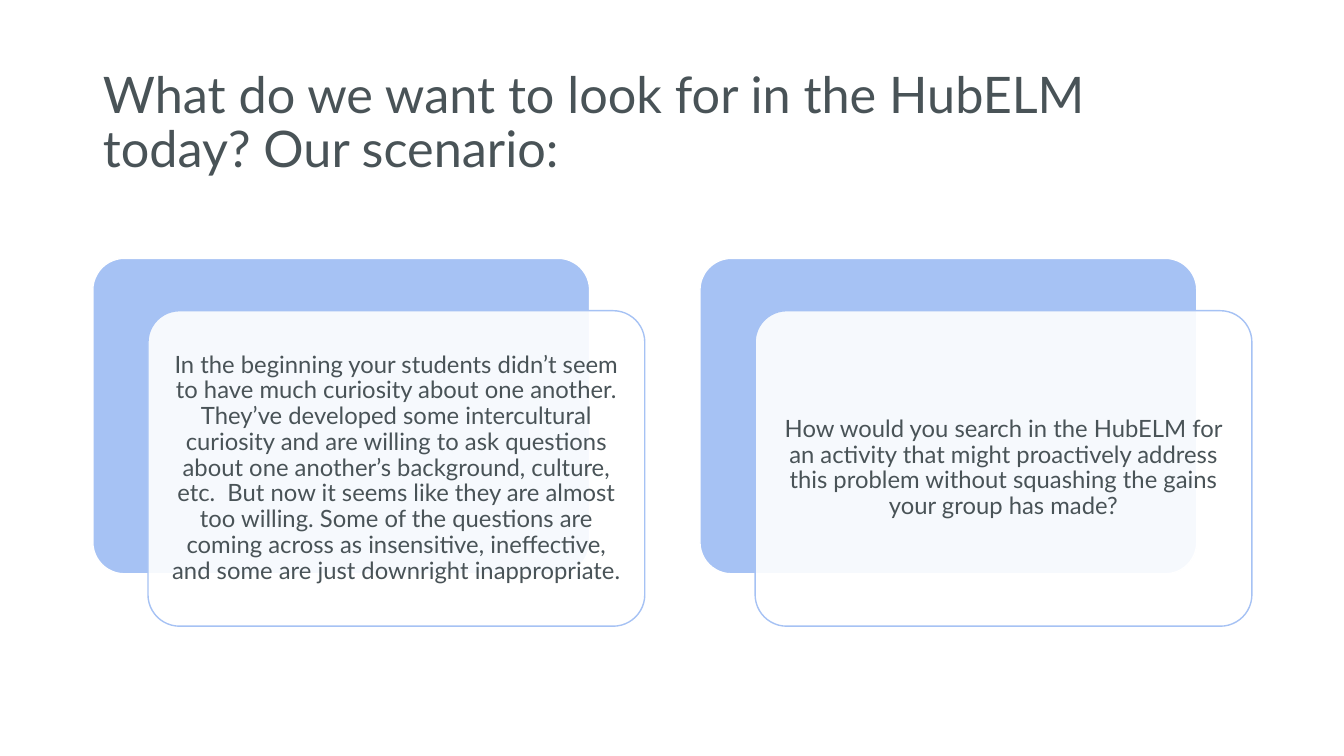
from lxml.etree import SubElement
from pptx import Presentation
from pptx.dml.color import RGBColor
from pptx.enum.shapes import MSO_SHAPE
from pptx.enum.text import MSO_ANCHOR, PP_ALIGN
from pptx.oxml.ns import qn
from pptx.util import Cm, Pt

SLATE = RGBColor(0x49, 0x53, 0x57)
BLUE = RGBColor(0xA6, 0xC2, 0xF4)
WHITE = RGBColor(0xFF, 0xFF, 0xFF)

TITLE = "What do we want to look for in the HubELM today? Our scenario:"
SCENARIO_TEXTS = [
    "In the beginning your students didn’t seem to have much curiosity about "
    "one another. They’ve developed some intercultural curiosity and are "
    "willing to ask questions about one another’s background, culture, etc.  "
    "But now it seems like they are almost too willing. Some of the questions "
    "are coming across as insensitive, ineffective, and some are just "
    "downright inappropriate.",
    "How would you search in the HubELM for an activity that might proactively "
    "address this problem without squashing the gains your group has made?",
]

# Card geometry in centimetres
CARD_LEFT, CARD_TOP = 2.34, 6.51
CARD_WIDTH, CARD_HEIGHT = 12.52, 7.95
CARD_PITCH = 15.3
FRONT_SHIFT_X, FRONT_SHIFT_Y = 1.39, 1.32


class SlideBuilder:
    """Holds the text style and the slide being built."""

    font = {"name": "Lato", "bold": False}

    def __init__(self, presentation):
        self.slide = presentation.slides.add_slide(presentation.slide_layouts[5])

    def set_text(self, shape, text, size, alignment, margins):
        frame = shape.text_frame
        frame_format = {"word_wrap": True, "vertical_anchor": MSO_ANCHOR.MIDDLE, **margins}
        for name, value in frame_format.items():
            setattr(frame, name, value)
        paragraph = frame.paragraphs[0]
        paragraph.alignment = alignment
        paragraph.line_spacing = 0.9
        run = paragraph.add_run()
        run.text = text
        for name, value in {**self.font, "size": Pt(size)}.items():
            setattr(run.font, name, value)
        run.font.color.rgb = SLATE

    def title(self, text):
        shape = self.slide.shapes.title
        position = {"left": Cm(2.34), "top": Cm(1.55), "width": Cm(29.21), "height": Cm(3.15)}
        for name, value in position.items():
            setattr(shape, name, value)
        self.set_text(shape, text, 36, PP_ALIGN.LEFT, {})

    def rounded_box(self, left, top, fill, line, opacity=100):
        shape = self.slide.shapes.add_shape(
            MSO_SHAPE.ROUNDED_RECTANGLE, Cm(left), Cm(top), Cm(CARD_WIDTH), Cm(CARD_HEIGHT)
        )
        shape.adjustments[0] = 0.1
        shape.shadow.inherit = False
        shape.fill.solid()
        shape.fill.fore_color.rgb = fill
        shape.line.color.rgb = line
        shape.line.width = Pt(1)
        if opacity < 100:
            color = shape.element.spPr.find(qn("a:solidFill"))[0]
            SubElement(color, qn("a:alpha"), val=str(opacity * 1000))
        return shape

    def card(self, left, top, text):
        self.rounded_box(left, top, BLUE, WHITE)
        front = self.rounded_box(left + FRONT_SHIFT_X, top + FRONT_SHIFT_Y, WHITE, BLUE, 90)
        sides = ("left", "top", "right", "bottom")
        margins = {f"margin_{side}": Cm(0.18) for side in sides}
        self.set_text(front, text, 17, PP_ALIGN.CENTER, margins)


def main():
    presentation = Presentation()
    presentation.slide_width = Cm(33.87)
    presentation.slide_height = Cm(19.05)
    builder = SlideBuilder(presentation)

    # Heading
    builder.title(TITLE)

    # Scenario cards, side by side
    for index, text in enumerate(SCENARIO_TEXTS):
        builder.card(CARD_LEFT + index * CARD_PITCH, CARD_TOP, text)

    presentation.save("out.pptx")


if __name__ == "__main__":
    main()
